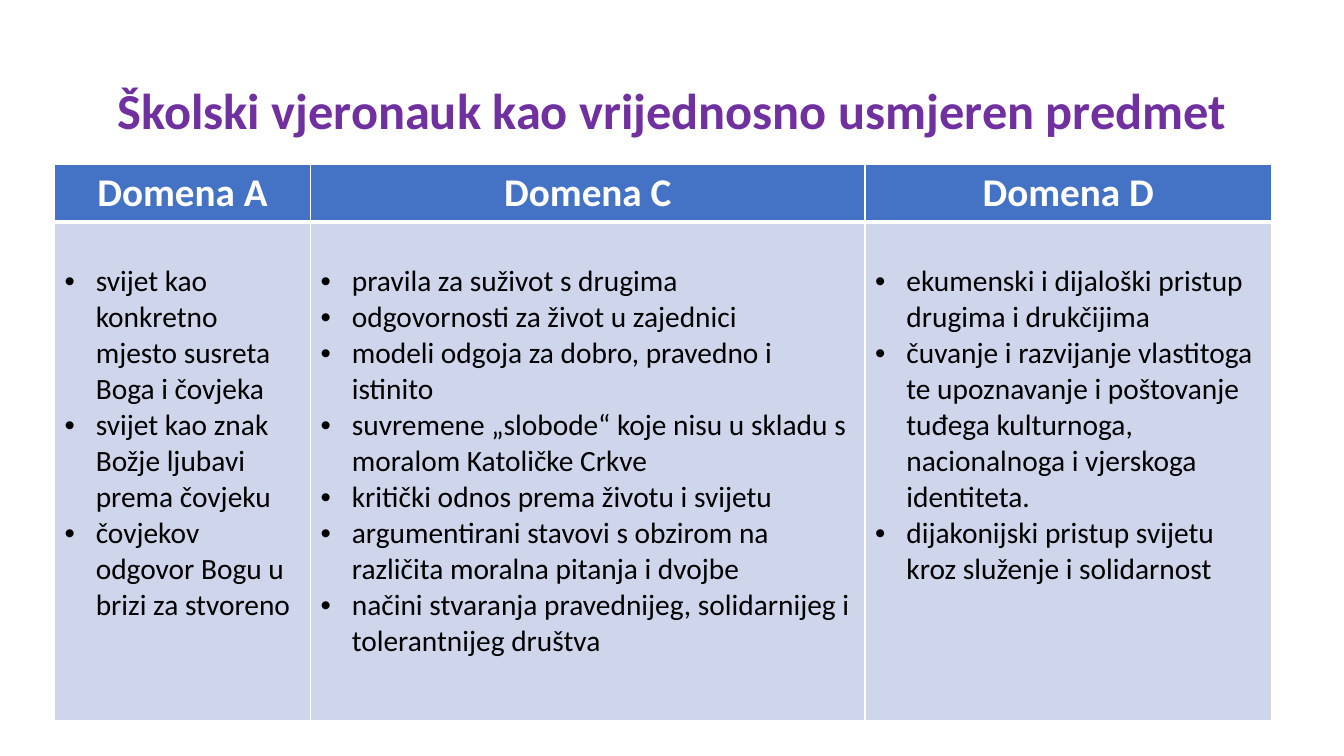
import pptx
import pptx.util
import pptx.dml.color
import pptx.enum.text
import pptx.oxml.ns
import lxml.etree

Inches = pptx.util.Inches
Pt = pptx.util.Pt
RGBColor = pptx.dml.color.RGBColor
CENTER = pptx.enum.text.PP_ALIGN.CENTER
MIDDLE = pptx.enum.text.MSO_ANCHOR.MIDDLE

PURPLE = RGBColor(0x70, 0x30, 0xA0)
BLUE = RGBColor(0x44, 0x72, 0xC4)
PALE_BLUE = RGBColor(0xCF, 0xD5, 0xEA)
WHITE = RGBColor(0xFF, 0xFF, 0xFF)
BLACK = RGBColor(0x00, 0x00, 0x00)

TITLE_FORMAT = {"name": "Calibri", "size": Pt(36), "bold": True}
HEADING_FORMAT = {"name": "Calibri", "size": Pt(28), "bold": True}
OUTCOME_FORMAT = {"name": "Calibri", "size": Pt(21), "bold": False}

DOMAINS = [
    ("Domena A", 2.54, [
        "svijet kao konkretno mjesto susreta Boga i čovjeka",
        "svijet kao znak Božje ljubavi prema čovjeku",
        "čovjekov odgovor Bogu u brizi za stvoreno",
    ]),
    ("Domena C", 5.5, [
        "pravila za suživot s drugima",
        "odgovornosti za život u zajednici",
        "modeli odgoja za dobro, pravedno i istinito",
        "suvremene „slobode“ koje nisu u skladu s moralom Katoličke Crkve",
        "kritički odnos prema životu i svijetu",
        "argumentirani stavovi s obzirom na različita moralna pitanja i dvojbe",
        "načini stvaranja pravednijeg, solidarnijeg i tolerantnijeg društva",
    ]),
    ("Domena D", 4.03, [
        "ekumenski i dijaloški pristup drugima i drukčijima",
        "čuvanje i razvijanje vlastitoga te upoznavanje i poštovanje tuđega "
        "kulturnoga, nacionalnoga i vjerskoga identiteta.",
        "dijakonijski pristup svijetu kroz služenje i solidarnost",
    ]),
]


def write(paragraph, text, text_format, color):
    run = paragraph.add_run()
    run.text = text
    for attribute, value in text_format.items():
        setattr(run.font, attribute, value)
    run.font.color.rgb = color


def paint_cell(cell, fill_color, border_widths):
    properties = cell._tc.get_or_add_tcPr()
    for side, width in border_widths.items():
        line = lxml.etree.SubElement(
            properties, pptx.oxml.ns.qn(f"a:ln{side}"), w=str(Pt(width)))
        line_fill = lxml.etree.SubElement(line, pptx.oxml.ns.qn("a:solidFill"))
        lxml.etree.SubElement(
            line_fill, pptx.oxml.ns.qn("a:srgbClr"), val=str(WHITE))
    cell.fill.solid()
    cell.fill.fore_color.rgb = fill_color


presentation = pptx.Presentation()
presentation.slide_width = Inches(13.33)
presentation.slide_height = Inches(7.5)
slide = presentation.slides.add_slide(presentation.slide_layouts[5])

title = slide.shapes.title
title.left, title.top = Inches(0.92), Inches(0.4)
title.width, title.height = Inches(11.5), Inches(1.45)
title.text_frame.vertical_anchor = MIDDLE
title.text_frame.word_wrap = True
heading = title.text_frame.paragraphs[0]
heading.alignment = CENTER
heading.line_spacing = 0.9
write(heading, "Školski vjeronauk kao vrijednosno usmjeren predmet",
      TITLE_FORMAT, PURPLE)

domains = slide.shapes.add_table(
    2, len(DOMAINS), Inches(0.54), Inches(1.63), Inches(12.07), Inches(5.51)).table
domains.rows[0].height = Inches(0.57)
domains.rows[1].height = Inches(4.94)

for column, (name, width, outcomes) in enumerate(DOMAINS):
    domains.columns[column].width = Inches(width)

    name_cell = domains.cell(0, column)
    paint_cell(name_cell, BLUE, {"L": 1, "R": 1, "T": 1, "B": 3})
    name_line = name_cell.text_frame.paragraphs[0]
    name_line.alignment = CENTER
    write(name_line, name, HEADING_FORMAT, WHITE)

    outcome_cell = domains.cell(1, column)
    paint_cell(outcome_cell, PALE_BLUE, {"L": 1, "R": 1, "T": 3, "B": 1})
    outcome_cell.margin_top = Inches(0.41)
    for index, outcome in enumerate(outcomes):
        frame = outcome_cell.text_frame
        item = frame.paragraphs[0] if index == 0 else frame.add_paragraph()
        indent = item._p.get_or_add_pPr()
        indent.set("marL", str(Inches(0.31)))
        indent.set("indent", str(Inches(-0.31)))
        lxml.etree.SubElement(
            indent, pptx.oxml.ns.qn("a:buFont"), typeface="Arial")
        lxml.etree.SubElement(indent, pptx.oxml.ns.qn("a:buChar"), char="•")
        write(item, outcome, OUTCOME_FORMAT, BLACK)

presentation.save("out.pptx")
